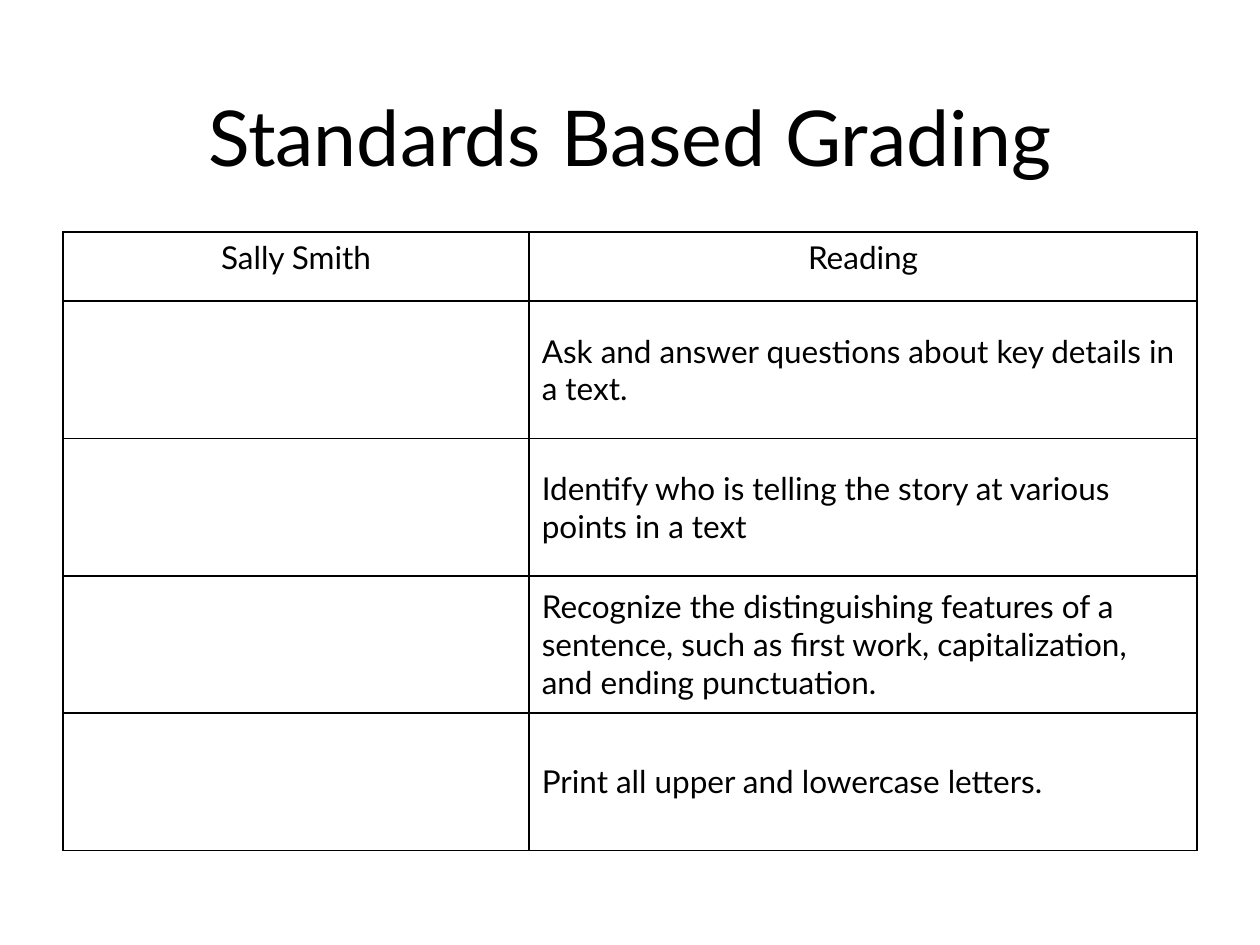
from dataclasses import dataclass

from pptx import Presentation
from pptx import util as u
from pptx.dml.color import RGBColor
from pptx.enum import text
from pptx.oxml import parse_xml
from pptx.oxml.ns import nsdecls


@dataclass(frozen=True)
class Theme:
    font: str = "Lato"
    ink: str = "000000"
    title_size: int = 44
    cell_size: int = 18
    border_width: int = 1


THEME = Theme()
HEADERS = ["Sally Smith", "Reading"]
STANDARDS = [
    "Ask and answer questions about key details in a text.",
    "Identify who is telling the story at various points in a text",
    "Recognize the distinguishing features of a sentence, such as first work, "
    "capitalization, and ending punctuation.",
    "Print all upper and lowercase letters.",
]
COLUMN_WIDTHS = [3.7, 5.3]
HEADER_HEIGHT = 0.55
ROW_HEIGHT = 1.09


def write(tf, words, size, align):
    tf.text = words
    p = tf.paragraphs[0]
    p.alignment = align
    for r in p.runs:
        r.font.name = THEME.font
        r.font.size = u.Pt(size)
        r.font.color.rgb = RGBColor.from_string(THEME.ink)
    return p


def add_title(s, words):
    box = s.shapes.add_textbox(u.Inches(0.69), u.Inches(0.4), u.Inches(8.62), u.Inches(1.45))
    tf = box.text_frame
    tf.word_wrap = True
    tf.vertical_anchor = text.MSO_ANCHOR.MIDDLE
    p = write(tf, words, THEME.title_size, text.PP_ALIGN.CENTER)
    p.line_spacing = 0.9


def add_borders(cell):
    tc_pr = cell._tc.get_or_add_tcPr()
    for position, side in enumerate(["lnL", "lnR", "lnT", "lnB"]):
        line = parse_xml(
            f'<a:{side} {nsdecls("a")} w="{u.Pt(THEME.border_width)}">'
            f'<a:solidFill><a:srgbClr val="{THEME.ink}"/></a:solidFill></a:{side}>'
        )
        tc_pr.insert(position, line)


def fill_cell(cell, words, is_header):
    cell.fill.background()
    add_borders(cell)
    if is_header:
        anchor, align = text.MSO_ANCHOR.TOP, text.PP_ALIGN.CENTER
    else:
        anchor, align = text.MSO_ANCHOR.MIDDLE, text.PP_ALIGN.LEFT
    cell.vertical_anchor = anchor
    write(cell.text_frame, words, THEME.cell_size, align)


def add_grading_table(s):
    rows = [HEADERS] + [["", standard] for standard in STANDARDS]
    heights = [HEADER_HEIGHT] + [ROW_HEIGHT] * len(STANDARDS)
    table = s.shapes.add_table(
        len(rows), len(HEADERS), u.Inches(0.5), u.Inches(1.84),
        u.Inches(sum(COLUMN_WIDTHS)), u.Inches(sum(heights)),
    ).table
    table.horz_banding = False
    table.first_row = False
    for column, width in zip(table.columns, COLUMN_WIDTHS):
        column.width = u.Inches(width)
    for i, (row, height, words) in enumerate(zip(table.rows, heights, rows)):
        row.height = u.Inches(height)
        for cell, entry in zip(row.cells, words):
            fill_cell(cell, entry, is_header=i == 0)


def main():
    prs = Presentation()
    prs.slide_width = u.Inches(10)
    prs.slide_height = u.Inches(7.5)
    s = prs.slides.add_slide(prs.slide_layouts[6])
    add_title(s, "Standards Based Grading")
    add_grading_table(s)
    prs.save("out.pptx")


if __name__ == "__main__":
    main()
